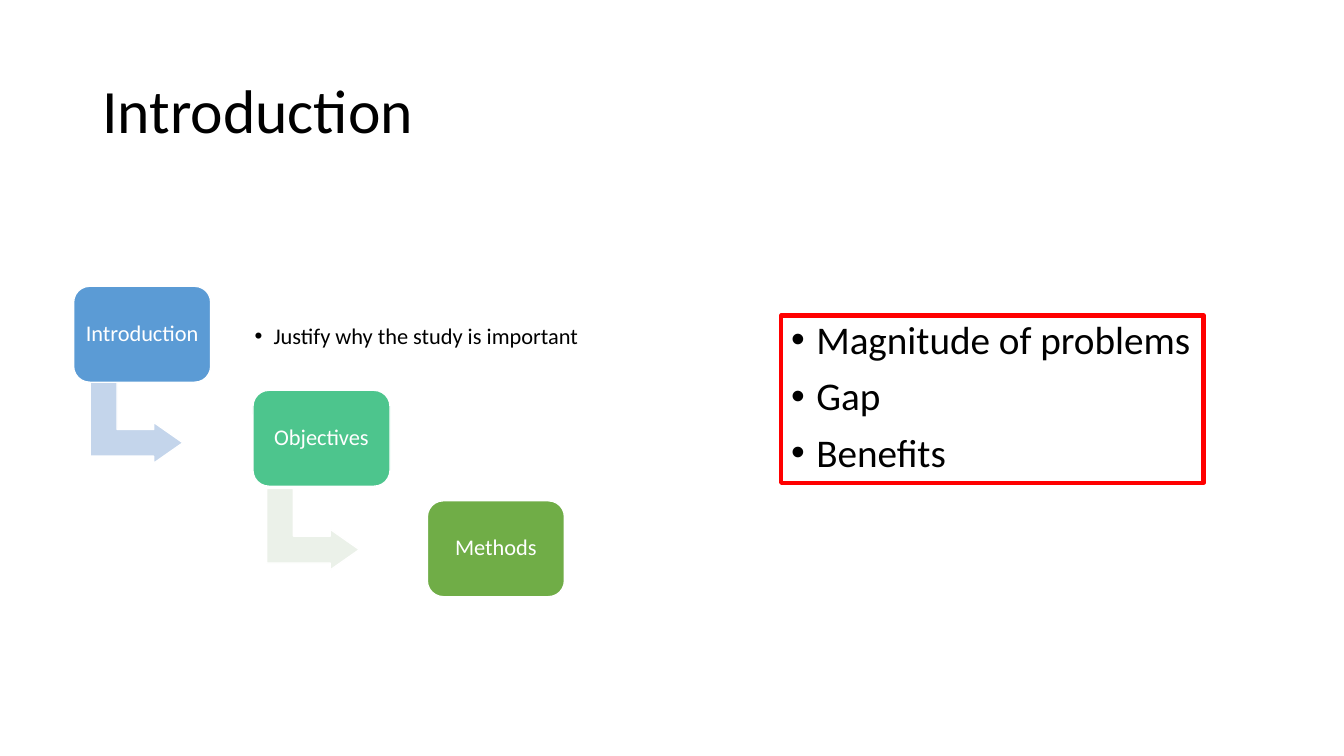
from pptx import Presentation
from pptx.dml.color import RGBColor
from pptx.enum.shapes import MSO_SHAPE
from pptx.enum.text import MSO_ANCHOR, PP_ALIGN
from pptx.oxml.ns import qn
from pptx.util import Pt

ROUND = MSO_SHAPE.ROUNDED_RECTANGLE
BENT = MSO_SHAPE.BENT_UP_ARROW
TOP, MIDDLE = MSO_ANCHOR.TOP, MSO_ANCHOR.MIDDLE
LEFT, CENTER = PP_ALIGN.LEFT, PP_ALIGN.CENTER

BLACK = RGBColor(0x00, 0x00, 0x00)
WHITE = RGBColor(0xFF, 0xFF, 0xFF)
RED = RGBColor(0xFF, 0x00, 0x00)
BLUE = RGBColor(0x5B, 0x9B, 0xD5)
TEAL = RGBColor(0x4D, 0xC5, 0x8D)
GREEN = RGBColor(0x70, 0xAD, 0x47)
PALE_BLUE = RGBColor(0xC4, 0xD5, 0xEB)
PALE_GREEN = RGBColor(0xEB, 0xF1, 0xE9)

STEPS = [
    ("Introduction", 52.6, 204.5, BLUE),
    ("Objectives", 180.7, 278.8, TEAL),
    ("Methods", 305.3, 357.7, GREEN),
]
ARROWS = [(68.4, 268.6, PALE_BLUE), (194.4, 344.9, PALE_GREEN)]
POINTS = ["Magnitude of problems", "Gap", "Benefits"]


class Page:
    font = "Calibri"

    def __init__(self, deck):
        self.slide = deck.slides.add_slide(deck.slide_layouts[5])
        self.shapes = self.slide.shapes

    def style(self, par, size, color, align=LEFT):
        par.font.name = self.font
        par.font.size = Pt(size)
        par.font.color.rgb = color
        par.alignment = align
        par.line_spacing = 0.9

    def title(self, text, x, y, w, h):
        head = self.shapes.title
        head.left, head.top, head.width, head.height = map(Pt, (x, y, w, h))
        head.text_frame.text = text
        head.text_frame.vertical_anchor = MIDDLE
        self.style(head.text_frame.paragraphs[0], 44, BLACK)

    def block(self, kind, x, y, w, h, color):
        shape = self.shapes.add_shape(kind, Pt(x), Pt(y), Pt(w), Pt(h))
        shape.shadow.inherit = False
        shape.fill.solid()
        shape.fill.fore_color.rgb = color
        shape.line.color.rgb = WHITE
        shape.line.width = Pt(1)
        return shape

    def arrow(self, x, y, color):
        shape = self.block(BENT, x, y, 58.3, 66.2, color)
        shape.rotation = 90
        for i, value in enumerate((0.328, 0.25, 0.358)):
            shape.adjustments[i] = value

    def step(self, text, x, y, color):
        frame = self.block(ROUND, x, y, 97.9, 68.5, color).text_frame
        frame.text = text
        frame.word_wrap = False
        frame.vertical_anchor = MIDDLE
        par = frame.paragraphs[0]
        self.style(par, 16, WHITE, CENTER)
        par.space_after = Pt(5.6)

    def bullets(self, lines, x, y, w, h, size, indent, before=0, after=0,
                anchor=TOP, inset=None):
        box = self.shapes.add_textbox(Pt(x), Pt(y), Pt(w), Pt(h))
        frame = box.text_frame
        frame.word_wrap = True
        frame.vertical_anchor = anchor
        if inset is not None:
            frame.margin_left = frame.margin_right = Pt(inset)
            frame.margin_top = frame.margin_bottom = Pt(inset)
        frame.text = "\n".join(lines)
        for par in frame.paragraphs:
            self.style(par, size, BLACK)
            par.space_before, par.space_after = Pt(before), Pt(after)
            props = par._p.get_or_add_pPr()
            props.set("marL", str(Pt(indent)))
            props.set("indent", str(-Pt(indent)))
            font = props.makeelement(qn("a:buFont"), {"typeface": "Arial"})
            mark = props.makeelement(qn("a:buChar"), {"char": "•"})
            props.find(qn("a:defRPr")).addprevious(font)
            font.addnext(mark)
        return box


def main():
    deck = Presentation()
    deck.slide_width, deck.slide_height = Pt(960), Pt(540)
    page = Page(deck)
    page.title("Introduction", 66, 28.8, 828, 104.4)
    for arrow in ARROWS:
        page.arrow(*arrow)
    for step in STEPS:
        page.step(*step)
    page.bullets(["Justify why the study is important"], 177, 213, 260, 55.4,
                 16, 13.5, after=2.4, anchor=MIDDLE, inset=5)
    frame = page.bullets(POINTS, 558, 225.4, 301.7, 119.5, 28, 18, before=10)
    frame.line.color.rgb = RED
    frame.line.width = Pt(3)
    deck.save("out.pptx")


if __name__ == "__main__":
    main()
